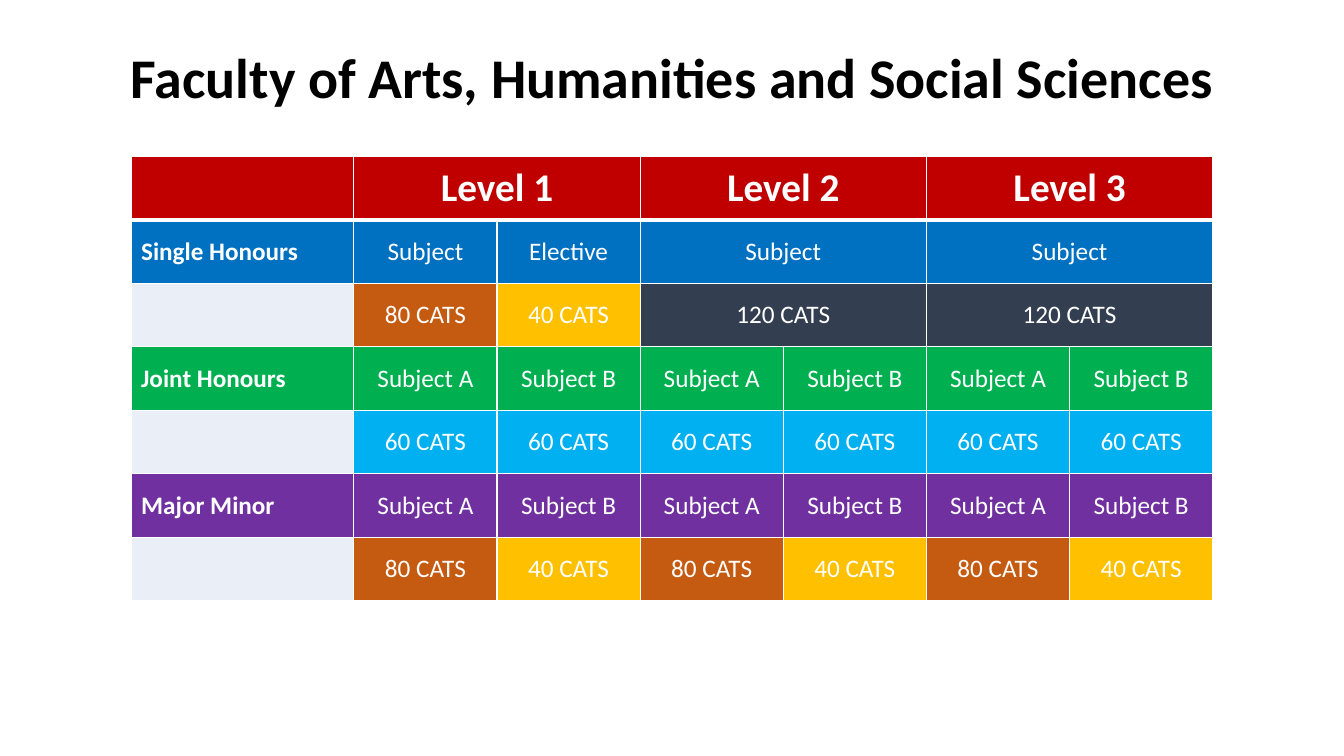
from lxml import etree
from pptx import Presentation
from pptx.dml.color import RGBColor
from pptx.enum import text
from pptx.oxml import ns
from pptx.util import Inches, Pt

RED, BLUE, GREEN, PURPLE = "C00000", "0070C0", "00B050", "7030A0"
ORANGE, GOLD, SLATE, SKY, PALE = "C55A11", "FFC000", "333F50", "00B0F0", "EAEFF7"
WHITE = "FFFFFF"


def write(frame, words, size=18, color=WHITE, bold=False, align=text.PP_ALIGN.CENTER,
          anchor=text.MSO_ANCHOR.MIDDLE):
    frame.vertical_anchor = anchor
    paragraph = frame.paragraphs[0]
    paragraph.alignment = align
    run = paragraph.add_run()
    run.text = words
    run.font.name = "Calibri"
    run.font.size = Pt(size)
    run.font.bold = bold
    run.font.color.rgb = RGBColor.from_string(color)
    return paragraph


def paint(cell, color, top=1, bottom=1):
    """Give a cell white borders and a solid fill."""
    properties = cell._tc.get_or_add_tcPr()
    for side, width in (("L", 1), ("R", 1), ("T", top), ("B", bottom)):
        line = etree.SubElement(properties, ns.qn("a:ln" + side), w=str(Pt(width)))
        solid = etree.SubElement(line, ns.qn("a:solidFill"))
        etree.SubElement(solid, ns.qn("a:srgbClr"), val=WHITE)
    cell.fill.solid()
    cell.fill.fore_color.rgb = RGBColor.from_string(color)


deck = Presentation()
deck.slide_width, deck.slide_height = Inches(13.33), Inches(7.5)
slide = deck.slides.add_slide(deck.slide_layouts[5])

# Title
title = slide.shapes.title
title.left, title.top = Inches(0.36), Inches(0.45)
title.width, title.height = Inches(12.61), Inches(1.09)
heading = write(title.text_frame, "Faculty of Arts, Humanities and Social Sciences", size=40,
                color="000000", bold=True, anchor=text.MSO_ANCHOR.TOP)
heading.line_spacing = 0.9

# Row label, label colour, then (words, columns covered, colour) across the levels
subject_pair = ["Subject A", "Subject B"]
split_credits = [("80 CATS", 1, ORANGE), ("40 CATS", 1, GOLD)]
pathways = [
    ("", RED, [(f"Level {level}", 2, RED) for level in (1, 2, 3)]),
    ("Single Honours", BLUE,
     [("Subject", 1, BLUE), ("Elective", 1, BLUE)] + [("Subject", 2, BLUE)] * 2),
    ("", PALE, split_credits + [("120 CATS", 2, SLATE)] * 2),
    ("Joint Honours", GREEN, [(name, 1, GREEN) for name in subject_pair] * 3),
    ("", PALE, [("60 CATS", 1, SKY)] * 6),
    ("Major Minor", PURPLE, [(name, 1, PURPLE) for name in subject_pair] * 3),
    ("", PALE, split_credits * 3),
]

# Table grid
levels = slide.shapes.add_table(len(pathways), 7, Inches(1.3), Inches(1.55),
                                Inches(10.73), Inches(4.41)).table
levels.horz_banding = False
for index, column in enumerate(levels.columns):
    column.width = Inches(1.42 if index else 2.21)
for row in levels.rows:
    row.height = Inches(0.63)

# Table contents
for row, (label, label_color, entries) in enumerate(pathways):
    is_header = row == 0
    rules = {"top": 3 if row == 1 else 1, "bottom": 3 if is_header else 1}
    paint(levels.cell(row, 0), label_color, **rules)
    if label:
        write(levels.cell(row, 0).text_frame, label, bold=True, align=text.PP_ALIGN.LEFT)
        levels.cell(row, 0).vertical_anchor = text.MSO_ANCHOR.MIDDLE
    column = 1
    for words, span, color in entries:
        for covered in range(column, column + span):
            paint(levels.cell(row, covered), color, **rules)
        cell = levels.cell(row, column)
        if span > 1:
            cell.merge(levels.cell(row, column + span - 1))
        write(cell.text_frame, words, size=28 if is_header else 18, bold=is_header)
        cell.vertical_anchor = text.MSO_ANCHOR.MIDDLE
        column += span

deck.save("out.pptx")
